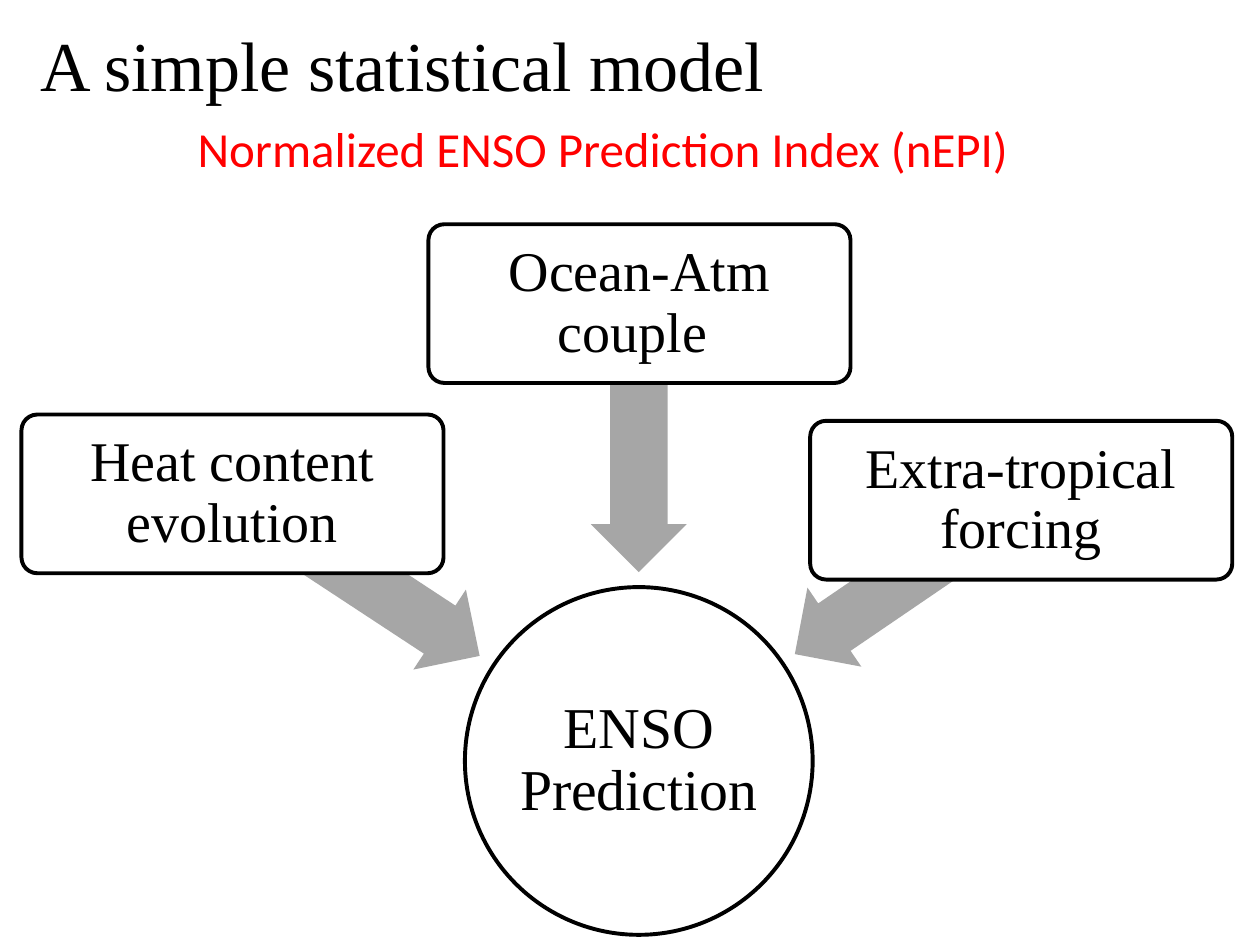
from dataclasses import dataclass

from pptx import Presentation
from pptx.dml.color import RGBColor
from pptx.enum.shapes import MSO_SHAPE as Preset
from pptx.enum.text import MSO_ANCHOR as Anchor, MSO_AUTO_SIZE as AutoSize, PP_ALIGN as Align
from pptx.shapes.autoshape import Shape
from pptx.slide import Slide
from pptx.text.text import TextFrame
from pptx.util import Inches, Pt

SLIDE_WIDTH, SLIDE_HEIGHT = Inches(10), Inches(7.5)
TITLE_ONLY = 5


@dataclass(frozen=True)
class Theme:
    ink: RGBColor = RGBColor(0x00, 0x00, 0x00)
    paper: RGBColor = RGBColor(0xFF, 0xFF, 0xFF)
    arrow: RGBColor = RGBColor(0xA6, 0xA6, 0xA6)
    accent: RGBColor = RGBColor(0xFF, 0x00, 0x00)
    serif: str = "Times New Roman"
    sans: str = "Calibri"
    title_size: float = 40
    subtitle_size: float = 28
    factor_size: float = 32
    outcome_size: float = 33
    outline: float = 2.25


THEME = Theme()


@dataclass(frozen=True)
class Area:
    """A rectangle in shares of the slide's width and height."""
    left: float
    top: float
    width: float
    height: float

    def lengths(self) -> tuple[int, int, int, int]:
        return (int(self.left * SLIDE_WIDTH), int(self.top * SLIDE_HEIGHT),
                int(self.width * SLIDE_WIDTH), int(self.height * SLIDE_HEIGHT))


def inches_area(left: float, top: float, width: float, height: float) -> Area:
    return Area(left / 10, top / 7.5, width / 10, height / 7.5)


@dataclass(frozen=True)
class Factor:
    """An input box and the arrow leading from it to the outcome."""
    label: str
    left: float
    top: float
    arrow_area: Area
    arrow_rotation: float


FACTOR_WIDTH, FACTOR_HEIGHT = 3.35, 1.26
FACTORS = (
    Factor("Heat content evolution", 0.17, 3.29, inches_area(1.65, 4.18, 2.35, 0.76), 213.3),
    Factor("Ocean-Atm couple ", 3.4, 1.78, inches_area(4.01, 3.1, 2.12, 0.76), 270),
    Factor("Extra-tropical forcing", 6.43, 3.34, inches_area(6.12, 4.2, 2.17, 0.76), 325.7),
)


def write(frame: TextFrame, text: str, size: float, font: str, color: RGBColor,
          align: Align = Align.LEFT, line_spacing: float = 1.0) -> None:
    paragraph = frame.paragraphs[0]
    paragraph.alignment = align
    paragraph.line_spacing = line_spacing
    run = paragraph.add_run()
    run.text = text
    run.font.size = Pt(size)
    run.font.name = font
    run.font.color.rgb = color


def write_heading(shape: Shape, text: str, size: float, font: str, color: RGBColor) -> None:
    frame = shape.text_frame
    frame.word_wrap = False
    frame.auto_size = AutoSize.SHAPE_TO_FIT_TEXT
    frame.vertical_anchor = Anchor.TOP
    write(frame, text, size, font, color)


def add_node(slide: Slide, preset: Preset, area: Area, text: str, size: float,
             inset: float) -> Shape:
    """Add an outlined shape with its centred label."""
    shape = slide.shapes.add_shape(preset, *area.lengths())
    shape.shadow.inherit = False
    shape.fill.solid()
    shape.fill.fore_color.rgb = THEME.paper
    shape.line.color.rgb = THEME.ink
    shape.line.width = Pt(THEME.outline)
    frame = shape.text_frame
    frame.word_wrap = True
    frame.vertical_anchor = Anchor.MIDDLE
    frame.margin_left = frame.margin_right = Inches(inset)
    frame.margin_top = frame.margin_bottom = Inches(inset)
    write(frame, text, size, THEME.serif, THEME.ink, Align.CENTER, 0.9)
    return shape


def add_arrow(slide: Slide, area: Area, rotation: float) -> None:
    arrow = slide.shapes.add_shape(Preset.LEFT_ARROW, *area.lengths())
    arrow.shadow.inherit = False
    arrow.adjustments[0], arrow.adjustments[1] = 0.6, 0.5
    arrow.rotation = rotation
    arrow.fill.solid()
    arrow.fill.fore_color.rgb = THEME.arrow
    arrow.line.fill.background()


def add_factor(slide: Slide, factor: Factor) -> None:
    add_arrow(slide, factor.arrow_area, factor.arrow_rotation)
    area = inches_area(factor.left, factor.top, FACTOR_WIDTH, FACTOR_HEIGHT)
    box = add_node(slide, Preset.ROUNDED_RECTANGLE, area, factor.label, THEME.factor_size, 0.07)
    box.adjustments[0] = 0.1


def main() -> None:
    presentation = Presentation()
    presentation.slide_width, presentation.slide_height = SLIDE_WIDTH, SLIDE_HEIGHT
    slide = presentation.slides.add_slide(presentation.slide_layouts[TITLE_ONLY])

    title = slide.shapes.title
    title.left, title.top, title.width, title.height = inches_area(0.22, 0.12, 6.02, 0.77).lengths()
    write_heading(title, "A simple statistical model", THEME.title_size, THEME.serif, THEME.ink)

    add_node(slide, Preset.OVAL, inches_area(3.69, 4.66, 2.76, 2.76), "ENSO Prediction",
             THEME.outcome_size, 0.02)
    for factor in FACTORS:
        add_factor(slide, factor)

    subtitle = slide.shapes.add_textbox(*inches_area(1.47, 0.89, 6.71, 0.57).lengths())
    write_heading(subtitle, "Normalized ENSO Prediction Index (nEPI)", THEME.subtitle_size,
                  THEME.sans, THEME.accent)

    presentation.save("out.pptx")


if __name__ == "__main__":
    main()
